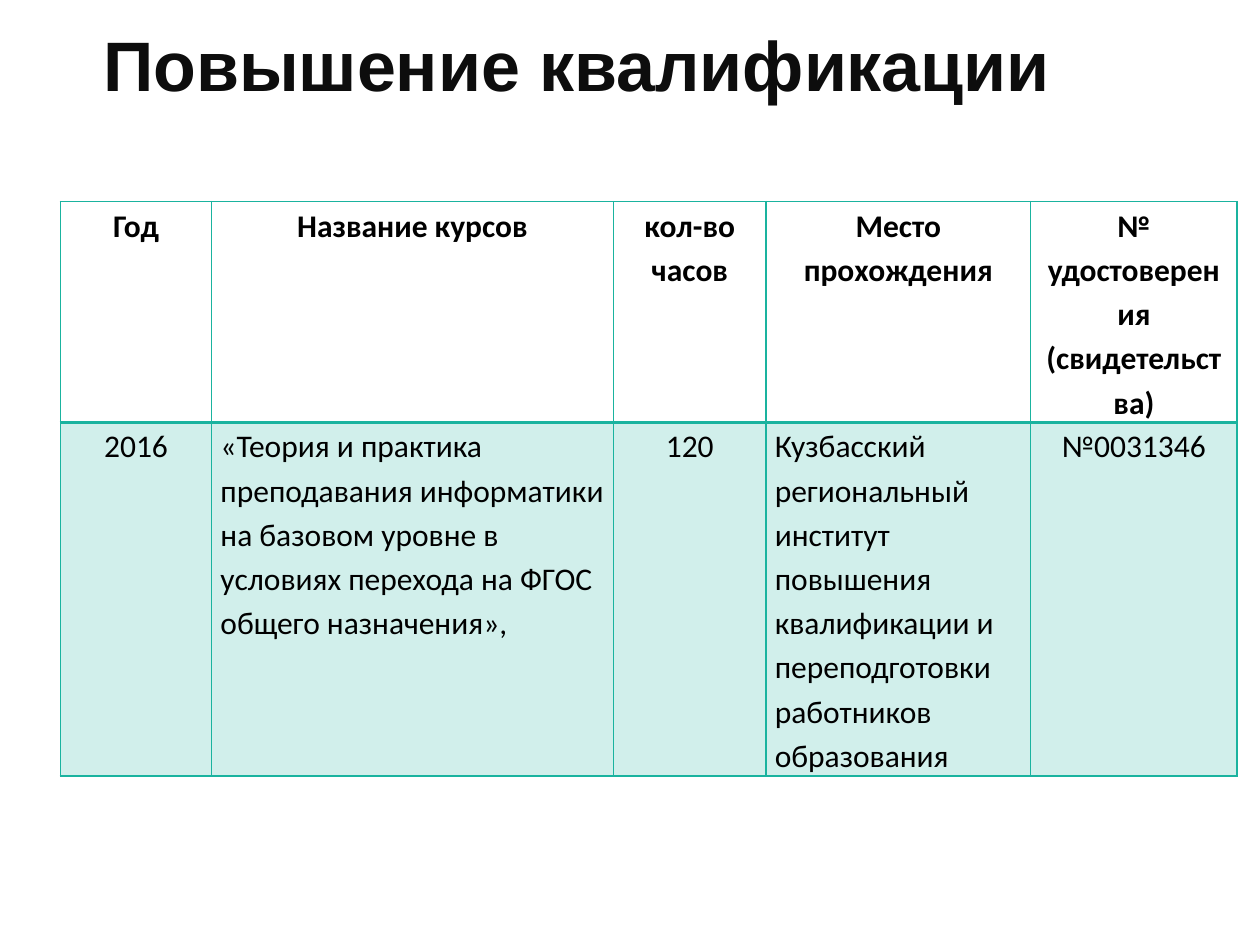
from lxml.etree import SubElement
from pptx import Presentation
from pptx.dml.color import RGBColor
from pptx.enum.text import MSO_ANCHOR, PP_ALIGN
from pptx.oxml.ns import qn
from pptx.util import Inches, Pt

COLORS = {"title": "0D0D0D", "text": "000000", "accent": "1AB39F"}
TITLE = "Повышение квалификации"
HEADER = ["Год", "Название курсов", "кол-во часов", "Место прохождения",
          "№ удостоверения (свидетельства)"]
COURSES = [
    ["2016",
     "«Теория и практика преподавания информатики на базовом уровне "
     "в условиях перехода на ФГОС общего назначения»,",
     "120",
     "Кузбасский региональный институт повышения квалификации "
     "и переподготовки работников образования",
     "№0031346"],
]
COL_WIDTHS = [1.2, 3.19, 1.21, 2.1, 1.64]
ROW_HEIGHTS = [1.75, 2.81]
LEFT_COLUMNS = (1, 3)
TINT_ALPHA = 20


def add_run(p, text, font, size, color, bold):
    r = p.add_run()
    r.text = text
    r.font.name, r.font.size, r.font.bold = font, Pt(size), bold
    r.font.color.rgb = RGBColor.from_string(COLORS[color])


def add_solid_fill(parent, color, alpha=100):
    fill = SubElement(parent, qn("a:solidFill"))
    clr = SubElement(fill, qn("a:srgbClr"), val=COLORS[color])
    if alpha < 100:
        SubElement(clr, qn("a:alpha"), val=str(alpha * 1000))


def style_cell(cell, is_header):
    """Draw the borders, then the fill, in the order the schema asks for."""
    cell.margin_left = cell.margin_right = Inches(0.07)
    cell.margin_top = cell.margin_bottom = 0
    tcPr = cell._tc.get_or_add_tcPr()
    widths = {"L": 1, "R": 1, "T": 1 if is_header else 2, "B": 2 if is_header else 1}
    for side, width in widths.items():
        ln = SubElement(tcPr, qn(f"a:ln{side}"), w=str(Pt(width)))
        add_solid_fill(ln, "accent")
    if is_header:
        SubElement(tcPr, qn("a:noFill"))
    else:
        add_solid_fill(tcPr, "accent", TINT_ALPHA)


prs = Presentation()
prs.slide_width, prs.slide_height = Inches(10), Inches(7.5)
s = prs.slides.add_slide(prs.slide_layouts[6])

tf = s.shapes.add_textbox(Inches(0.72), Inches(0.01), Inches(8.57), Inches(1.07)).text_frame
tf.word_wrap = True
tf.vertical_anchor = MSO_ANCHOR.MIDDLE
p = tf.paragraphs[0]
p.line_spacing = 0.9
add_run(p, TITLE, "Arial", 40, "title", True)

rows = [HEADER] + COURSES
table = s.shapes.add_table(len(rows), len(HEADER), Inches(0.48), Inches(1.6),
                           Inches(sum(COL_WIDTHS)), Inches(sum(ROW_HEIGHTS))).table
table.horz_banding = False
for col, width in zip(table.columns, COL_WIDTHS):
    col.width = Inches(width)
for row, height in zip(table.rows, ROW_HEIGHTS):
    row.height = Inches(height)

for i, texts in enumerate(rows):
    is_header = i == 0
    for j, text in enumerate(texts):
        cell = table.cell(i, j)
        style_cell(cell, is_header)
        p = cell.text_frame.paragraphs[0]
        p.line_spacing = 1.15
        to_left = not is_header and j in LEFT_COLUMNS
        p.alignment = PP_ALIGN.LEFT if to_left else PP_ALIGN.CENTER
        add_run(p, text, "Calibri", 18, "text", is_header)

prs.save("out.pptx")
